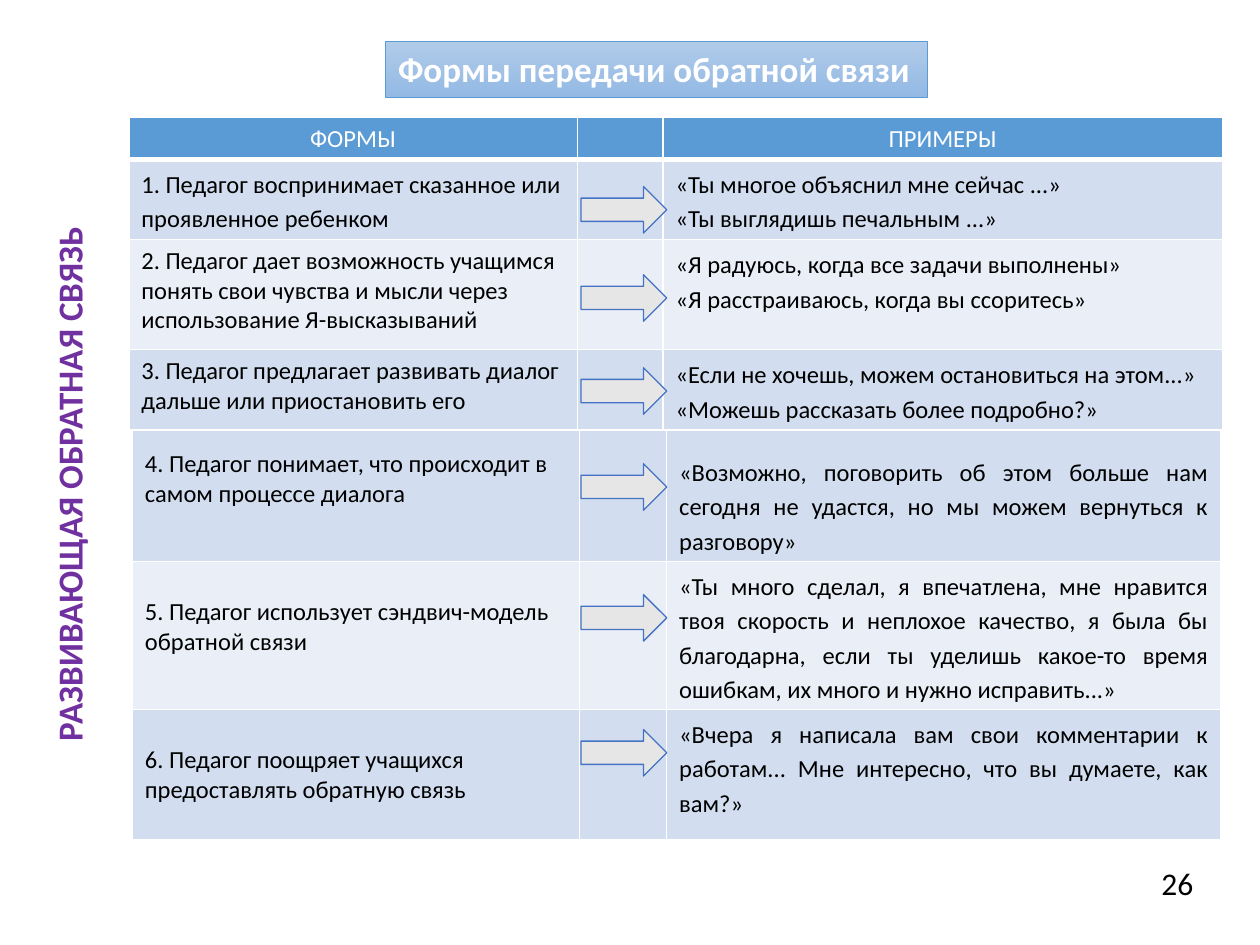
from lxml import etree
from pptx import Presentation
from pptx.dml.color import RGBColor
from pptx.enum import shapes, text
from pptx.oxml.ns import qn
from pptx.util import Pt

FONT = "Calibri"
WHITE, BLACK, BLUE = "FFFFFF", "000000", "5B9BD5"
BANDS = ("D2DEEF", "EAEFF7")
LEFT, MID, JUST = (text.PP_ALIGN.LEFT, text.PP_ALIGN.CENTER,
                   text.PP_ALIGN.JUSTIFY)
LINE = 17  # height of one 14 pt line

# Each row: form, examples, line spacing of the form,
# blank lines above the form and above the examples
UPPER = [
    ("1. Педагог воспринимает сказанное или проявленное ребенком",
     ["«Ты многое объяснил мне сейчас ...»",
      "«Ты выглядишь печальным ...»"], 1.15, 0, 0),
    ("2. Педагог дает возможность учащимся понять свои чувства и мысли "
     "через использование Я-высказываний",
     ["«Я радуюсь, когда все задачи выполнены»",
      "«Я расстраиваюсь, когда вы ссоритесь»"], 1, 0, 0),
    ("3. Педагог предлагает развивать диалог дальше или приостановить его",
     ["«Если не хочешь, можем остановиться на этом...»",
      "«Можешь рассказать более подробно?»"], 1, 0, 0),
]
LOWER = [
    ("4. Педагог понимает, что происходит в самом процессе диалога",
     ["«Возможно, поговорить об этом больше нам сегодня не удастся, "
      "но мы можем вернуться к разговору»"], 1, 1, 1.15),
    ("5. Педагог использует сэндвич-модель обратной связи",
     ["«Ты много сделал, я впечатлена, мне нравится твоя скорость и "
      "неплохое качество, я была бы благодарна, если ты уделишь какое-то "
      "время ошибкам, их много и нужно исправить...»"], 1, 1, 0),
    ("6. Педагог поощряет учащихся предоставлять обратную связь",
     ["«Вчера я написала вам свои комментарии к работам... "
      "Мне интересно, что вы думаете, как вам?»"], 1, 1, 0),
]


def rgb(code):
    return RGBColor.from_string(code)


def box(*nums):
    return [Pt(n) for n in nums]


def write(frame, lines, size, color, bold=False, align=LEFT, space=1):
    for i, line in enumerate(lines):
        par = frame.add_paragraph() if i else frame.paragraphs[0]
        par.alignment = align
        par.line_spacing = space
        run = par.add_run()
        run.text = line
        font = run.font
        font.name, font.size, font.bold = FONT, Pt(size), bold
        font.color.rgb = rgb(color)


def edge(cell, low):
    """Draw white cell borders; low is the width of the bottom one."""
    props = cell._tc.get_or_add_tcPr()
    for side, width in zip("LRTB", (1, 1, 1, low)):
        line = etree.SubElement(props, qn(f"a:ln{side}"), w=str(Pt(width)))
        fill = etree.SubElement(line, qn("a:solidFill"))
        etree.SubElement(fill, qn("a:srgbClr"), val=WHITE)


def paint(cell, color, low=1):
    edge(cell, low)
    cell.fill.solid()
    cell.fill.fore_color.rgb = rgb(color)
    end = cell.text_frame.paragraphs[0]._p.get_or_add_endParaRPr()
    end.set("sz", "1200")


def add_grid(slide, left, top, cols, highs, heads, rows):
    frame = slide.shapes.add_table(len(rows) + 1, len(cols),
                                   *box(left, top, sum(cols), sum(highs)))
    grid = frame.table
    for col, width in zip(grid.columns, cols):
        col.width = Pt(width)
    for row, high in zip(grid.rows, highs):
        row.height = Pt(high)
    for c, head in enumerate(heads):
        cell = grid.cell(0, c)
        paint(cell, BLUE, 3)
        if head:
            write(cell.text_frame, [head], 14, WHITE, align=MID)
    for r, (form, says, space, gap, drop) in enumerate(rows, 1):
        for c in range(len(cols)):
            paint(grid.cell(r, c), BANDS[(r - 1) % 2])
        first, last = grid.cell(r, 0), grid.cell(r, 2)
        first.margin_top = Pt(3.6 + gap * LINE)
        last.margin_top = Pt(3.6 + drop * LINE)
        write(first.text_frame, [form], 14, BLACK, space=space)
        write(last.text_frame, says, 14, BLACK, align=JUST, space=1.15)


def add_arrow(slide, top):
    arrow = slide.shapes.add_shape(shapes.MSO_SHAPE.RIGHT_ARROW,
                                   *box(332, top, 49, 26.6))
    arrow.shadow.inherit = False
    arrow.fill.solid()
    arrow.fill.fore_color.rgb = rgb("E7E6E6")
    arrow.line.color.rgb = rgb("4472C4")
    arrow.line.width = Pt(0.75)


def add_label(slide, place, line, size, color, bold=False, turn=0):
    label = slide.shapes.add_textbox(*box(*place))
    label.rotation = turn
    label.text_frame.word_wrap = True
    write(label.text_frame, [line], size, color, bold)


def set_title(slide, line):
    title = slide.shapes.title
    title.left, title.top, title.width, title.height = box(
        220.3, 23.8, 309.6, 31.7)
    title.fill.gradient()
    title.fill.gradient_angle = 270
    for stop, color in zip(title.fill.gradient_stops, ("B1CBE9", "93B9E4")):
        stop.color.rgb = rgb(color)
    title.line.color.rgb = rgb(BLUE)
    title.line.width = Pt(0.5)
    frame = title.text_frame
    frame.word_wrap = False
    frame.auto_size = text.MSO_AUTO_SIZE.NONE
    frame.vertical_anchor = text.MSO_ANCHOR.TOP
    write(frame, [line], 20, WHITE, True)


def main():
    deck = Presentation()
    deck.slide_width, deck.slide_height = box(720, 540)
    slide = deck.slides.add_slide(deck.slide_layouts[5])
    set_title(slide, "Формы передачи обратной связи")
    add_label(slide, (-144, 231.1, 367.2, 31.7), "РАЗВИВАЮЩАЯ ОБРАТНАЯ СВЯЗЬ",
              20, "7030A0", True, 270)
    add_grid(slide, 75.6, 214.6, (255.6, 49.7, 316.8),
             (21.6, 84.6, 84.6, 74.3), ("", "", ""), LOWER)
    add_grid(slide, 73.6, 67.1, (256.3, 49, 319.7),
             (23.6, 45.7, 62.9, 45.1), ("ФОРМЫ", "", "ПРИМЕРЫ"), UPPER)
    for top in (106.6, 157, 210.2, 265, 339.8, 416.9):
        add_arrow(slide, top)
    add_label(slide, (656.6, 490.3, 44.6, 28.8), "26", 18, BLACK)
    deck.save("out.pptx")


if __name__ == "__main__":
    main()
